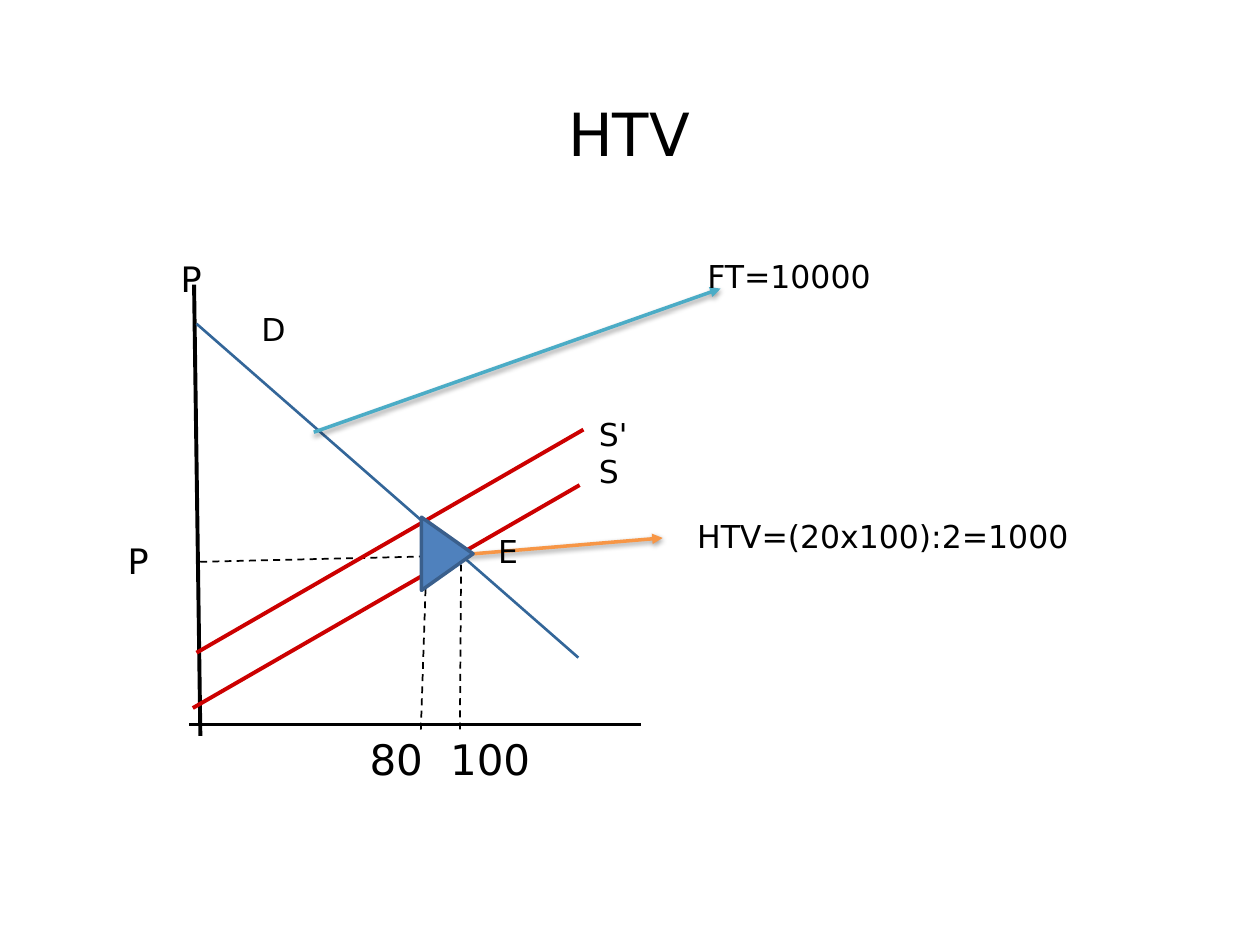
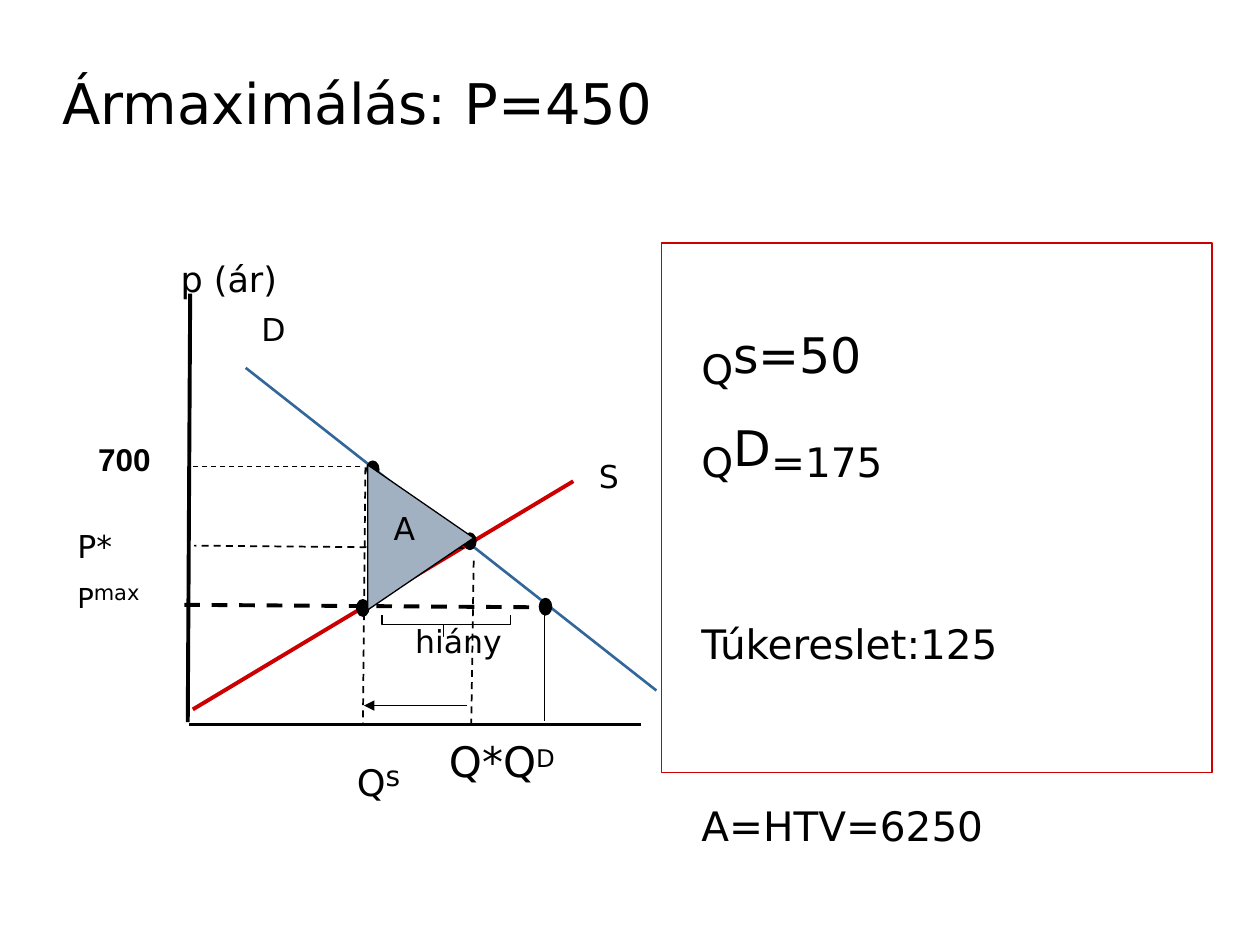
"""Build two slides on deadweight loss and a price ceiling."""
from lxml import etree
from pptx import Presentation
from pptx import util as u
from pptx.dml.color import RGBColor
from pptx.enum import dml, shapes, text
from pptx.oxml.ns import qn

INK = {"black": "000000", "blue": "336699", "red": "CC0000", "teal": "4BACC6",
       "orange": "F79646", "wedge": "4F81BD", "edge": "3A5F8C", "loss": "A2B1C1"}
FONT = "DejaVu Sans"
AXIS = (108, 414, 366.5, 414, "black", 2.25, "")


def link(slide, x1, y1, x2, y2, ink, width, kind):
    """Draw a line; kind may name dash, arrow and shade."""
    item = slide.shapes.add_connector(shapes.MSO_CONNECTOR.STRAIGHT,
                                      *[u.Pt(v) for v in (x1, y1, x2, y2)])
    item.line.color.rgb = RGBColor.from_string(INK[ink])
    item.line.width = u.Pt(width)
    if "dash" in kind:
        item.line.dash_style = dml.MSO_LINE.DASH
    props = item._element.spPr
    if "arrow" in kind:
        etree.SubElement(props.find(qn("a:ln")), qn("a:tailEnd"), type="triangle")
    effect = etree.SubElement(props, qn("a:effectLst"))
    if "shade" in kind:
        shade = etree.SubElement(effect, qn("a:outerShdw"), blurRad=str(u.Pt(3.1)),
                                 dist=str(u.Pt(1.6)), dir="5400000", rotWithShape="0")
        tone = etree.SubElement(shade, qn("a:srgbClr"), val=INK["black"])
        etree.SubElement(tone, qn("a:alpha"), val="38000")


def put(slide, x, y, w, h, paras, size=18, pad=(1, 0, 0, 0), tab=None, **form):
    """Add a text box; each run is a string or (string, size, baseline)."""
    frame = slide.shapes.add_textbox(*[u.Pt(v) for v in (x, y, w, h)]).text_frame
    frame.word_wrap = True
    for side, gap in zip(("left", "top", "right", "bottom"), pad):
        setattr(frame, f"margin_{side}", u.Pt(gap))
    for i, runs in enumerate(paras):
        para = frame.add_paragraph() if i else frame.paragraphs[0]
        if tab:
            stops = etree.SubElement(para._p.get_or_add_pPr(), qn("a:tabLst"))
            etree.SubElement(stops, qn("a:tab"), pos=str(u.Pt(tab)), algn="l")
        for part in [runs] if isinstance(runs, str) else runs:
            words, points, base = (part, size, 0) if isinstance(part, str) else part
            run = para.add_run()
            run.text = words
            look = {"name": FONT, "size": u.Pt(points), "bold": False} | form
            for key, value in look.items():
                setattr(run.font, key, value)
            run.font.color.rgb = RGBColor.from_string(INK["black"])
            if base:
                run.font._element.set("baseline", str(base * 1000))
    return frame


deck = Presentation()
deck.slide_width, deck.slide_height = u.Pt(720), u.Pt(540)
blank = deck.slide_layouts[6]
tax, cap = [deck.slides.add_slide(blank) for _ in range(2)]

for row in [
    (110.9, 162.7, 114.5, 420.5, "black", 2.25, ""),
    AXIS,
    (112.3, 185, 330.5, 375.8, "blue", 1.5, ""),
    (110.2, 404.6, 331.2, 277.2, "red", 2.25, ""),
    (263.5, 322.6, 262.8, 416.9, "black", 1, "dash"),
    (264.2, 317.5, 112.3, 321.1, "black", 1, "dash"),
    (179.3, 247, 411.8, 164.9, "teal", 2, "arrow shade"),
    (249.8, 318.2, 378.7, 307.4, "orange", 2, "arrow shade"),
    (112.3, 373, 333.4, 245.5, "red", 2.25, ""),
    (244.1, 308.9, 240.5, 416.9, "black", 1, "dash"),
]:
    link(tax, *row)

wedge = tax.shapes.add_shape(shapes.MSO_SHAPE.FLOWCHART_EXTRACT,
                             u.Pt(234.7), u.Pt(301.7), u.Pt(41.8), u.Pt(29.5))
wedge.rotation = 90

head = put(tax, 51, 50.4, 617, 46, ["HTV"], 34, (0, 5, 0, 0))
head.vertical_anchor = text.MSO_ANCHOR.MIDDLE
head.paragraphs[0].alignment = text.PP_ALIGN.CENTER
for x, y, w, h, paras, size in [
    (102.2, 146.9, 60.5, 24.5, ["P"], 20),
    (72, 308.2, 14.4, 24.5, ["P"], 20),
    (283.7, 303.8, 13.7, 22.3, ["E"], 18),
    (341.3, 236.9, 25.2, 43.9, ["S'", "S"], 18),
    (403.2, 146.9, 264.2, 22.3, ["FT=10000"], 18),
    (397.4, 295.2, 270.7, 21.6, ["HTV=(20x100):2=1000"], 18),
]:
    put(tax, x, y, w, h, paras, size)
put(tax, 210.2, 419, 120, 28.8, ["80\t100"], 24, tab=46)

for row in [
    (108.7, 167.8, 107.3, 412.6, "black", 2.25, ""),
    AXIS,
    (140.4, 210.2, 375.1, 394.6, "blue", 1.5, ""),
    (110.2, 405.4, 327.6, 275, "red", 2.25, ""),
    (206, 266.4, 109.4, 266.4, "black", 0.75, "dash"),
    (208.8, 267.1, 207.4, 413.3, "black", 1, "dash"),
    (270.7, 320.4, 269.3, 414, "black", 1, "dash"),
    (265, 313.2, 110.9, 311.8, "black", 1, "dash"),
    (302.4, 347, 105.1, 345.6, "black", 2.25, "dash"),
    (311, 347.8, 311, 411.8, "black", 0.75, ""),
    (267.1, 403.2, 208, 403.2, "black", 1, "arrow"),
]:
    link(cap, *row)

frame = cap.shapes.add_shape(shapes.MSO_SHAPE.RECTANGLE,
                             u.Pt(378), u.Pt(138.8), u.Pt(314.6), u.Pt(302.6))
dots = [cap.shapes.add_shape(shapes.MSO_SHAPE.OVAL, u.Pt(x), u.Pt(y), u.Pt(7), u.Pt(9.4))
        for x, y in [(209.5, 263.5), (265, 304.6), (203.8, 342.7), (308.2, 342)]]

outlines = []
for closed, points in [
    (False, [(291.6, 351.4), (291.6, 357.1), (253.4, 357.1), (253.4, 363.6),
             (253.4, 357.1), (218.2, 357.1), (218.2, 351.4)]),
    (True, [(210.2, 265.7), (210.2, 348.5), (270.7, 307.4)]),
]:
    start, *rest = [(u.Pt(x), u.Pt(y)) for x, y in points]
    pen = cap.shapes.build_freeform(*start)
    pen.add_line_segments(rest, close=closed)
    outlines.append(pen.convert_to_shape())
brace, loss = outlines

for item, fill, edge, width in [
    (wedge, "wedge", "edge", 2), (frame, None, "red", 0.75),
    (brace, None, "black", 0.75), (loss, "loss", "black", 0.75),
    *[(dot, "black", "black", 0.75) for dot in dots],
]:
    item.shadow.inherit = False
    if fill:
        item.fill.solid()
        item.fill.fore_color.rgb = RGBColor.from_string(INK[fill])
    else:
        item.fill.background()
    item.line.color.rgb = RGBColor.from_string(INK[edge])
    item.line.width = u.Pt(width)

for x, y, w, h, paras, size in [
    (34.6, 38.9, 662.4, 38.9, ["Ármaximálás: P=450"], 32),
    (102.2, 146.9, 60.5, 24.5, ["p (ár)"], 20),
    (341.3, 261.4, 14.4, 22.3, ["S"], 18),
    (236.2, 355.7, 54, 22.3, ["hiány"], 18),
    (223.9, 290.9, 14.4, 22.3, ["A"], 18),
    (203, 413.3, 29.5, 36, [[("Q", 36, -16), ("s", 16, 0)]], 16),
    (255.6, 420.5, 67, 28.8, [["Q*Q", ("D", 24, 24)]], 24),
]:
    put(cap, x, y, w, h, paras, size)
for slide in (tax, cap):
    put(slide, 148.3, 177.1, 15.8, 22.3, ["D"])

price = put(cap, 43.2, 306, 38.9, 38.2, [["P* ", ("P", 27, -17), ("max", 12, 0)]])
price.paragraphs[0].line_spacing = 0.75
inset = (7.2, 3.6, 7.2, 3.6)
put(cap, 49, 247.7, 46.8, 28.8, ["700"], pad=inset, name="Arial", bold=True)

facts = put(cap, 393.8, 170, 283.7, 220.3, [
    [("Q", 40, -16), ("s=50", 28, 0)],
    [("Q", 40, -16), ("D", 28, 0), ("=175", 40, -16)],
    [("Túkereslet:125", 40, -16)],
    [("A=HTV=6250", 40, -16)],
], pad=inset)
for para, gap in zip(facts.paragraphs, (0, 2, 53, 53)):
    para.space_before = u.Pt(gap)

deck.save("out.pptx")
